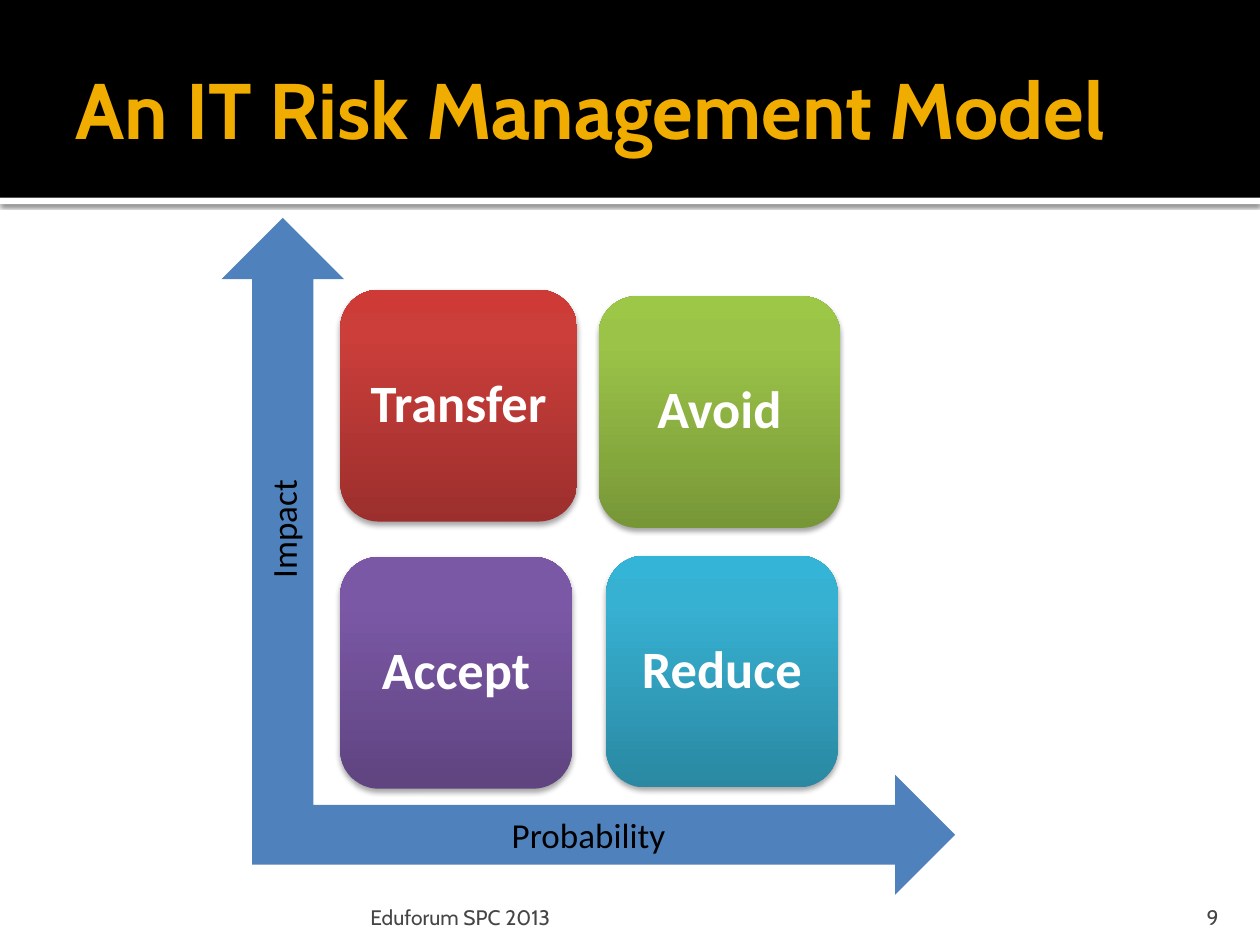
from dataclasses import dataclass

from lxml import etree
from pptx import Presentation
from pptx.dml.color import RGBColor
from pptx.enum.shapes import MSO_SHAPE
from pptx.enum.text import MSO_ANCHOR, PP_ALIGN
from pptx.oxml.ns import qn
from pptx.util import Inches, Pt

RECTANGLE = MSO_SHAPE.RECTANGLE
ROUNDED = MSO_SHAPE.ROUNDED_RECTANGLE
UP_ARROW = MSO_SHAPE.UP_ARROW
RIGHT_ARROW = MSO_SHAPE.RIGHT_ARROW
LEFT, CENTER, RIGHT = PP_ALIGN.LEFT, PP_ALIGN.CENTER, PP_ALIGN.RIGHT
MIDDLE, BOTTOM = MSO_ANCHOR.MIDDLE, MSO_ANCHOR.BOTTOM

HEADING_FONT = "Cabin"
BODY_FONT = "Calibri"
AXIS_COLOR = "4F81BD"
FOOTER_COLOR = "454545"


@dataclass(frozen=True)
class Box:
    left: float
    top: float
    width: float
    height: float

    def lengths(self) -> tuple:
        return tuple(map(Inches, (self.left, self.top, self.width, self.height)))


@dataclass(frozen=True)
class Response:
    label: str
    box: Box
    gradient: tuple[str, str, str]


@dataclass(frozen=True)
class Axis:
    label: str
    box: Box
    arrow: int
    direction: str


@dataclass(frozen=True)
class FooterItem:
    text: str
    box: Box
    align: int
    insets: tuple[float, float, float, float]


RESPONSES = (
    Response("Accept", Box(2.7, 4.42, 1.84, 1.84), ("5F4480", "7B58A6", "7C57A8")),
    Response("Reduce", Box(4.81, 4.41, 1.84, 1.84), ("2A88A2", "37B1D2", "34B4D6")),
    Response("Transfer", Box(2.7, 2.3, 1.88, 1.84), ("9C2F2D", "CB3E3A", "CE3B37")),
    Response("Avoid", Box(4.75, 2.35, 1.92, 1.84), ("779737", "9BC348", "9DC746")),
)
AXES = (
    Axis("Probability", Box(2, 6.15, 5.58, 0.95), RIGHT_ARROW, "horz"),
    Axis("Impact", Box(1.76, 1.73, 0.97, 4.7), UP_ARROW, "vert270"),
)
FOOTER = (
    FooterItem("Eduforum SPC 2013", Box(2.89, 7.08, 6.02, 0.3), LEFT, (0.05, 0.05, 0.05, 0)),
    FooterItem("9", Box(8.97, 7.08, 0.8, 0.3), RIGHT, (0.1, 0.05, 0.1, 0)),
)


def rgb(color: str) -> RGBColor:
    return RGBColor.from_string(color)


def write(shape, text: str, *, size: float, color: str, font: str = BODY_FONT,
          bold: bool = False, align: int = CENTER, anchor: int = MIDDLE,
          insets: tuple = (0, 0, 0, 0), spacing: float = 1.0) -> None:
    frame = shape.text_frame
    frame.word_wrap = True
    frame.vertical_anchor = anchor
    (frame.margin_left, frame.margin_top,
     frame.margin_right, frame.margin_bottom) = map(Inches, insets)
    paragraph = frame.paragraphs[0]
    paragraph.alignment = align
    paragraph.line_spacing = spacing
    run = paragraph.add_run()
    run.text = text
    run.font.name = font
    run.font.size = Pt(size)
    run.font.bold = bold
    run.font.color.rgb = rgb(color)


def add_plain(slide, kind: int, box: Box, color: str):
    shape = slide.shapes.add_shape(kind, *box.lengths())
    shape.fill.solid()
    shape.fill.fore_color.rgb = rgb(color)
    shape.line.fill.background()
    shape.shadow.inherit = False
    return shape


def add_color(parent, color: str):
    return etree.SubElement(parent, qn("a:srgbClr"), val=color)


def cast_shadow(shape, blur: float, distance: float, opacity: int) -> None:
    effects = shape.element.spPr.find(qn("a:effectLst"))
    shadow = etree.SubElement(
        effects, qn("a:outerShdw"), blurRad=str(Pt(blur)), dist=str(Pt(distance)),
        dir="5400000", rotWithShape="0")
    etree.SubElement(add_color(shadow, "000000"), qn("a:alpha"), val=str(opacity * 1000))


def fill_upward(shape, colors: tuple[str, str, str]) -> None:
    shape.fill.gradient()
    shape.fill.gradient_angle = 90
    stops = next(shape.element.iter(qn("a:gsLst")))
    stops.clear()
    for position, color in zip((0, 80, 100), colors):
        add_color(etree.SubElement(stops, qn("a:gs"), pos=str(position * 1000)), color)


def add_header(slide, text: str) -> None:
    strip = add_plain(slide, RECTANGLE, Box(0, 1.57, 10, 0.05), "FFFFFF")
    cast_shadow(strip, 2.5, 0.8, 60)
    add_plain(slide, RECTANGLE, Box(0, 0, 10, 1.57), "000000")
    title = slide.shapes.title
    title.left, title.top, title.width, title.height = Box(0.5, 0.17, 9, 1.37).lengths()
    write(title, text, size=45, color="F0AD00", font=HEADING_FONT, bold=True,
          align=LEFT, insets=(0.1, 0.05, 0.05, 0.05))
    title.element.getparent().append(title.element)


def add_response(slide, response: Response) -> None:
    tile = add_plain(slide, ROUNDED, response.box, response.gradient[0])
    fill_upward(tile, response.gradient)
    cast_shadow(tile, 3.1, 1.8, 35)
    write(tile, response.label, size=30, color="FFFFFF", bold=True,
          insets=(0.12,) * 4, spacing=0.9)


def add_axis(slide, axis: Axis) -> None:
    arrow = add_plain(slide, axis.arrow, axis.box, AXIS_COLOR)
    write(arrow, axis.label, size=20, color="000000")
    arrow.text_frame._txBody.bodyPr.set("vert", axis.direction)


def add_footer_item(slide, item: FooterItem) -> None:
    textbox = slide.shapes.add_textbox(*item.box.lengths())
    write(textbox, item.text, size=12, color=FOOTER_COLOR, font=HEADING_FONT,
          align=item.align, anchor=BOTTOM, insets=item.insets)


def main() -> None:
    presentation = Presentation()
    presentation.slide_width = Inches(10)
    presentation.slide_height = Inches(7.5)
    slide = presentation.slides.add_slide(presentation.slide_layouts[5])
    add_header(slide, "An IT Risk Management Model")
    for item in FOOTER:
        add_footer_item(slide, item)
    for response in RESPONSES:
        add_response(slide, response)
    for axis in AXES:
        add_axis(slide, axis)
    presentation.save("out.pptx")


if __name__ == "__main__":
    main()
